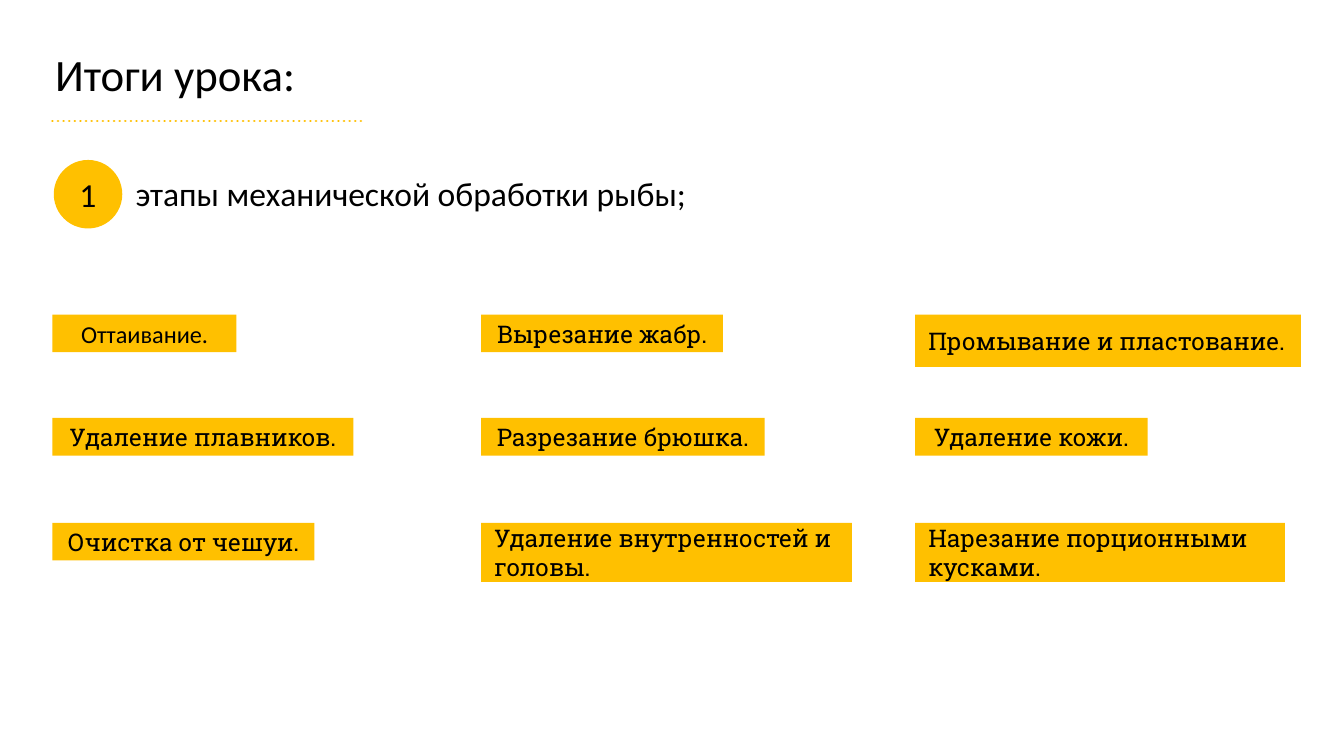
import pptx
import pptx.util
import pptx.dml.color
import pptx.enum.dml
import pptx.enum.shapes
import pptx.enum.text
from lxml import etree

Inches = pptx.util.Inches
Shapes = pptx.enum.shapes.MSO_SHAPE
Align = pptx.enum.text.PP_ALIGN
Anchor = pptx.enum.text.MSO_ANCHOR
AMBER, BLACK = "FFC000", "000000"


def rgb(value):
    return pptx.dml.color.RGBColor.from_string(value)


def write(shape, text, size, font="Calibri", align=Align.LEFT, anchor=Anchor.MIDDLE):
    """Put one formatted paragraph into a shape with standard margins."""
    frame = shape.text_frame
    frame_format = {
        "word_wrap": True, "vertical_anchor": anchor,
        "margin_left": Inches(0.1), "margin_right": Inches(0.1),
        "margin_top": Inches(0.05), "margin_bottom": Inches(0.05),
        "auto_size": pptx.enum.text.MSO_AUTO_SIZE.NONE,
    }
    for name, value in frame_format.items():
        setattr(frame, name, value)
    paragraph = frame.paragraphs[0]
    paragraph.text = text
    paragraph.alignment = align
    paragraph.line_spacing = 1.0
    paragraph.space_before = pptx.util.Pt(0)
    for name, value in {"name": font, "size": pptx.util.Pt(size)}.items():
        setattr(paragraph.font, name, value)
    paragraph.font.color.rgb = rgb(BLACK)


presentation = pptx.Presentation()
presentation.slide_width = Inches(10)
presentation.slide_height = Inches(10) * 9 // 16
slide = presentation.slides.add_slide(presentation.slide_layouts[5])

# Heading
heading = slide.shapes.title
position = {"left": 0.31, "top": 0.3, "width": 2.38, "height": 0.5}
for name, value in position.items():
    setattr(heading, name, Inches(value))
write(heading, "Итоги урока:", 24, anchor=Anchor.TOP)

underline = slide.shapes.add_connector(
    pptx.enum.shapes.MSO_CONNECTOR.STRAIGHT,
    Inches(0.39), Inches(0.9), Inches(2.69), Inches(0.9))
underline.line.color.rgb = rgb(AMBER)
underline.line.width = pptx.util.Pt(1.5)
underline.line.dash_style = pptx.enum.dml.MSO_LINE.ROUND_DOT
stroke = underline.line._get_or_add_ln()
stroke.set("cap", "rnd")
etree.SubElement(stroke.getparent(), pptx.oxml.ns.qn("a:effectLst"))

# Numbered topic
topic = slide.shapes.add_textbox(Inches(0.91), Inches(1.24), Inches(5.18), Inches(0.4))
write(topic, "этапы механической обработки рыбы;", 18, anchor=Anchor.TOP)

# Stages by column: text, width, height, font, alignment
SLAB = "Roboto Slab"
columns = {
    0.39: [("Оттаивание.", 1.37, 0.28, "Calibri", Align.CENTER),
           ("Удаление плавников.", 2.24, 0.28, SLAB, Align.CENTER),
           ("Очистка от чешуи.", 1.95, 0.28, SLAB, Align.CENTER)],
    3.58: [("Вырезание жабр.", 1.8, 0.28, SLAB, Align.CENTER),
           ("Разрезание брюшка.", 2.11, 0.28, SLAB, Align.CENTER),
           ("Удаление внутренностей и головы.", 2.76, 0.44, SLAB, Align.LEFT)],
    6.81: [("Промывание и пластование.", 2.87, 0.39, SLAB, Align.LEFT),
           ("Удаление кожи.", 1.73, 0.28, SLAB, Align.CENTER),
           ("Нарезание порционными кусками.", 2.75, 0.44, SLAB, Align.LEFT)],
}
row_tops = [2.34, 3.11, 3.89]

labels = [(Shapes.OVAL, 0.4, 1.19, 0.51, 0.51, "1", 18, "Calibri", Align.CENTER)]
for left, stages in columns.items():
    for top, (text, width, height, font, align) in zip(row_tops, stages):
        labels.append((Shapes.RECTANGLE, left, top, width, height,
                       text, 13, font, align))

for kind, left, top, width, height, text, size, font, align in labels:
    label = slide.shapes.add_shape(
        kind, Inches(left), Inches(top), Inches(width), Inches(height))
    label.shadow.inherit = False
    label.fill.solid()
    label.fill.fore_color.rgb = rgb(AMBER)
    label.line.fill.background()
    write(label, text, size, font, align)

presentation.save("out.pptx")
